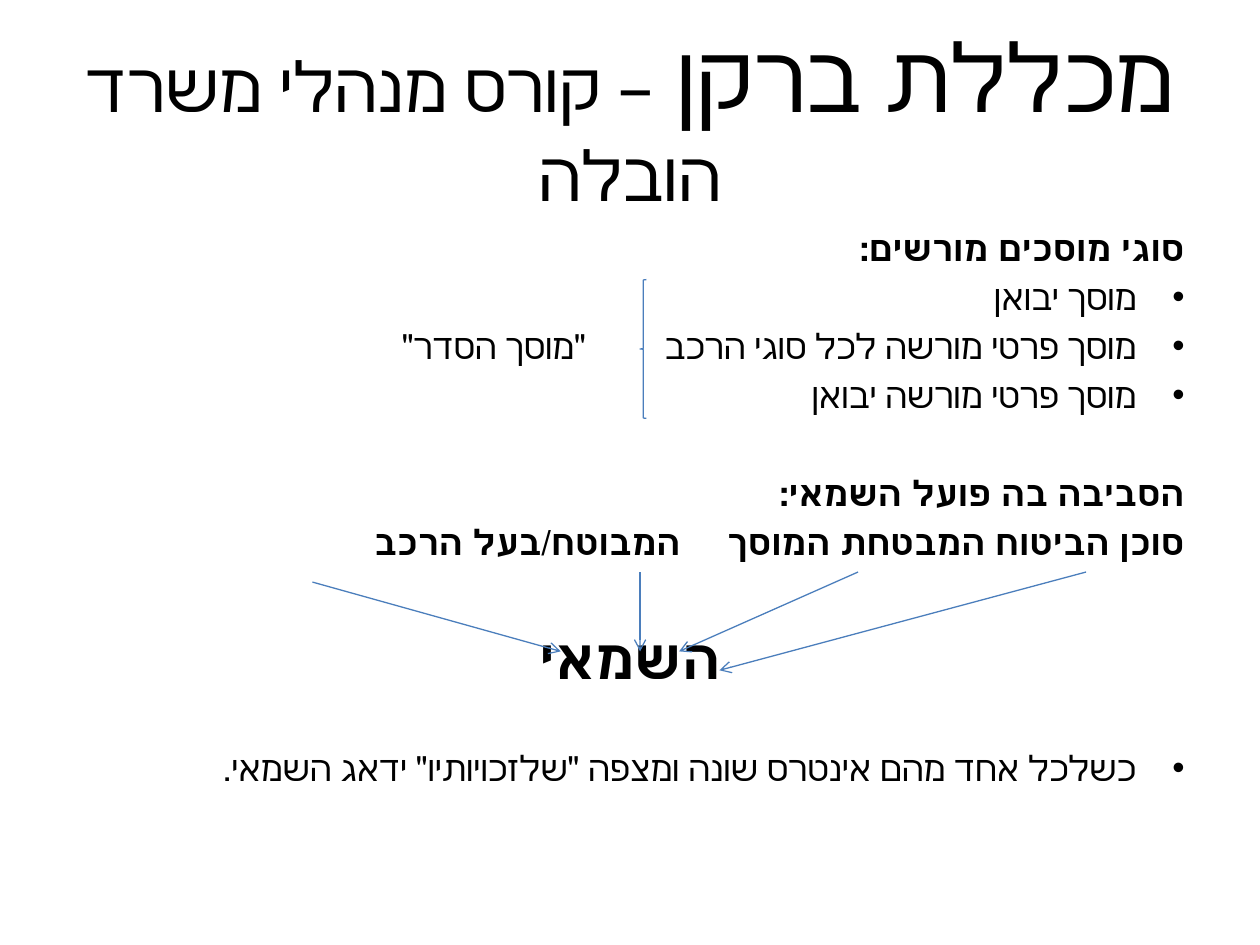
from lxml.etree import SubElement
from pptx import Presentation
from pptx.dml.color import RGBColor
from pptx.enum.shapes import MSO_CONNECTOR, MSO_SHAPE
from pptx.enum.text import MSO_ANCHOR, PP_ALIGN
from pptx.oxml.ns import qn
from pptx.util import Inches, Pt

BLACK = RGBColor(0x00, 0x00, 0x00)
BLUE = RGBColor(0x4B, 0x7E, 0xBC)
FONT = "Calibri"


def add_box(slide, left, top, width, height, anchor=MSO_ANCHOR.TOP):
    box = slide.shapes.add_textbox(Inches(left), Inches(top), Inches(width), Inches(height))
    tf = box.text_frame
    tf.word_wrap = True
    tf.vertical_anchor = anchor
    return tf


def add_text(tf, *runs, align=PP_ALIGN.RIGHT, bold=False, before=0, bullet=False):
    """Add one right-to-left paragraph; each run is a (text, size) pair."""
    p = tf.paragraphs[0] if not tf.paragraphs[0].runs else tf.add_paragraph()
    p.alignment = align
    p.space_before = Pt(before)
    pPr = p._p.get_or_add_pPr()
    pPr.set("rtl", "1")
    if bullet:
        pPr.set("marL", str(Inches(0.38)))
        pPr.set("marR", "0")
        pPr.set("indent", str(-Inches(0.38)))
        SubElement(pPr, qn("a:buFont")).set("typeface", "Arial")
        SubElement(pPr, qn("a:buChar")).set("char", "•")
    for text, size in runs:
        r = p.add_run()
        r.text = text
        r.font.size = Pt(size)
        r.font.bold = bold
        r.font.name = FONT
        r.font.color.rgb = BLACK


def add_title(slide, left, top, width, height):
    tf = add_box(slide, left, top, width, height, MSO_ANCHOR.MIDDLE)
    add_text(tf, ("מכללת ברקן ", 54), ("– קורס מנהלי משרד הובלה", 39.6),
             align=PP_ALIGN.CENTER)


def add_body(slide, left, top, width, height):
    tf = add_box(slide, left, top, width, height)
    gap, section_gap = 4, 32
    add_text(tf, ("סוגי מוסכים מורשים:", 20), bold=True, before=gap)
    for garage in ("מוסך יבואן", "מוסך פרטי מורשה לכל סוגי הרכב", "מוסך פרטי מורשה יבואן"):
        add_text(tf, (garage, 20), before=gap, bullet=True)
    add_text(tf, ("הסביבה בה פועל השמאי:", 20), bold=True, before=section_gap)
    add_text(tf, ("סוכן הביטוח \tהמבטחת \tהמוסך \t\tהמבוטח/בעל הרכב", 20),
             bold=True, before=gap)
    add_text(tf, ("השמאי", 32), align=PP_ALIGN.CENTER, bold=True, before=section_gap + 2.6)
    add_text(tf, ('כשלכל אחד מהם אינטרס שונה ומצפה "שלזכויותיו" ידאג השמאי.', 20),
             before=section_gap, bullet=True)


def add_garage_brace(slide, left, top, width, height):
    """Brace beside the garage list, with its label to the left."""
    sp = slide.shapes.add_shape(MSO_SHAPE.LEFT_BRACE, Inches(left), Inches(top),
                                Inches(width), Inches(height))
    sp.shadow.inherit = False
    sp.fill.background()
    sp.line.color.rgb = BLUE
    sp.line.width = Pt(0.75)
    label_width, label_height = 2, 0.4
    tf = add_box(slide, left - 0.33 - label_width, top + 0.31, label_width, label_height)
    add_text(tf, ('"מוסך הסדר"', 20))


def add_arrow(slide, start, end):
    line = slide.shapes.add_connector(MSO_CONNECTOR.STRAIGHT,
                                      *(Inches(v) for v in start + end))
    line.line.color.rgb = BLUE
    line.line.width = Pt(0.75)
    SubElement(line.line._get_or_add_ln(), qn("a:tailEnd")).set("type", "arrow")
    SubElement(line._element.spPr, qn("a:effectLst"))


def add_appraiser_arrows(slide, top, bottom):
    """Arrows from the four parties down to the appraiser."""
    for start, end in (
        ((8.62, top), (5.71, bottom + 0.15)),
        ((6.81, top), (5.39, bottom)),
        ((5.08, top), (5.08, bottom)),
        ((2.48, top + 0.08), (4.45, bottom)),
    ):
        add_arrow(slide, start, end)


def main():
    prs = Presentation()
    prs.slide_width, prs.slide_height = Inches(10), Inches(7.5)
    slide = prs.slides.add_slide(prs.slide_layouts[6])
    add_title(slide, 0.5, 0.3, 9, 1.25)
    add_body(slide, 0.5, 1.75, 9, 4.95)
    add_garage_brace(slide, 5.08, 2.22, 0.05, 1.1)
    add_appraiser_arrows(slide, 4.54, 5.17)
    prs.save("out.pptx")


if __name__ == "__main__":
    main()
